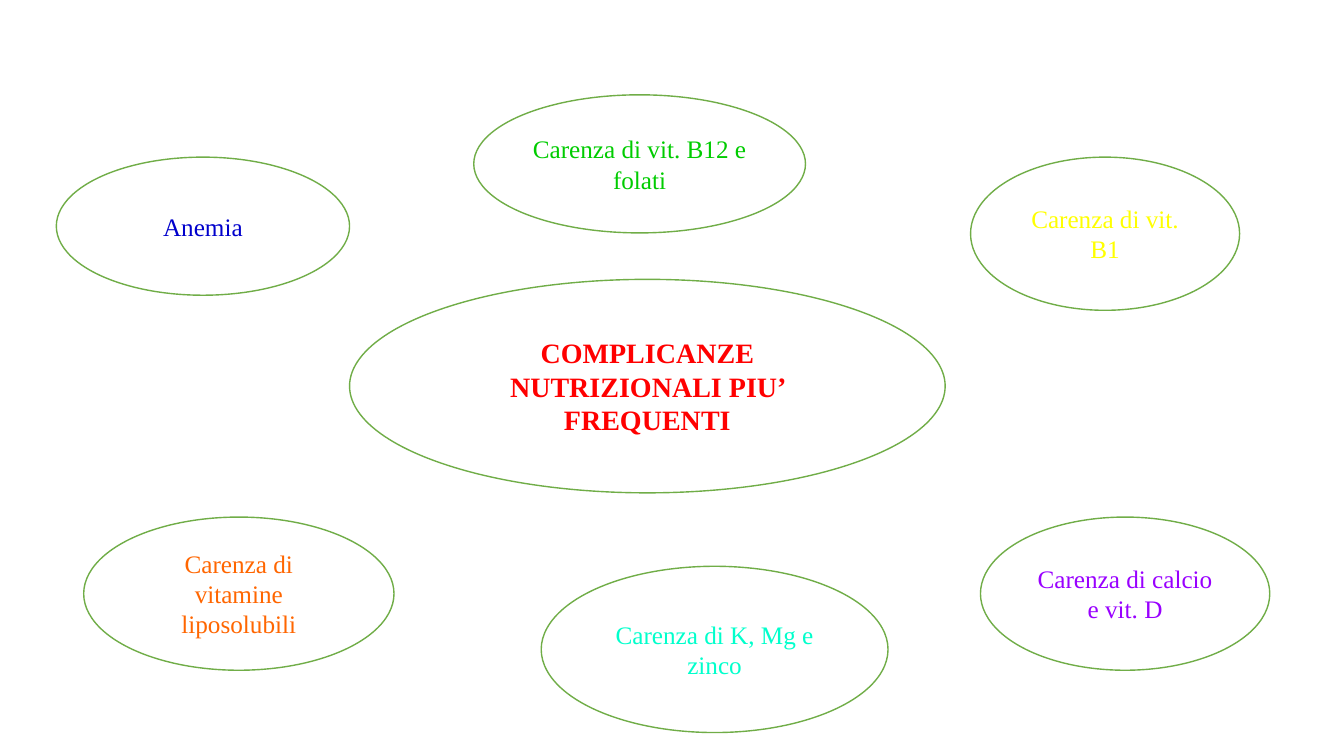
import pptx
import pptx.util
import pptx.dml.color
import pptx.enum.shapes
import pptx.enum.text

Cm = pptx.util.Cm
FONT = "Times New Roman"
GREEN = "70AD47"
WHITE = "FFFFFF"

CORE = ("COMPLICANZE NUTRIZIONALI PIU’ FREQUENTI", "FF0000", (8.81, 7.04, 15.01, 5.38))
ITEMS = [
    ("Anemia", "0000CC", (1.42, 3.96, 7.39, 3.48)),
    ("Carenza di vit. B12 e folati", "00CC00", (11.94, 2.39, 8.36, 3.48)),
    ("Carenza di vit. B1", "FFFF00", (24.46, 3.96, 6.78, 3.86)),
    ("Carenza di calcio e vit. D", "9900FF", (24.71, 13.03, 7.29, 3.86)),
    ("Carenza di K, Mg e zinco", "00FFCC", (13.64, 14.27, 8.74, 4.19)),
    ("Carenza di vitamine liposolubili", "FF6600", (2.11, 13.03, 7.82, 3.86)),
]


def paint(target, color):
    target.rgb = pptx.dml.color.RGBColor.from_string(color)


def write(shape, text, color=GREEN, size=18, bold=False):
    frame = shape.text_frame
    frame.word_wrap = True
    frame.vertical_anchor = pptx.enum.text.MSO_ANCHOR.MIDDLE
    para = frame.paragraphs[0]
    para.alignment = pptx.enum.text.PP_ALIGN.CENTER
    run = para.add_run()
    run.text = text
    run.font.name = FONT
    run.font.size = pptx.util.Pt(size)
    run.font.bold = bold
    paint(run.font.color, color)


def add_oval(slide, text, color, box, **style):
    oval = slide.shapes.add_shape(
        pptx.enum.shapes.MSO_SHAPE.OVAL, *(Cm(side) for side in box))
    oval.shadow.inherit = False
    oval.fill.solid()
    paint(oval.fill.fore_color, WHITE)
    paint(oval.line.color, GREEN)
    oval.line.width = pptx.util.Pt(1)
    write(oval, text, color=color, **style)


def main():
    deck = pptx.Presentation()
    deck.slide_width = Cm(33.87)
    deck.slide_height = Cm(19.05)
    slide = deck.slides.add_slide(deck.slide_layouts[6])
    add_oval(slide, *CORE, size=20, bold=True)
    for item in ITEMS:
        add_oval(slide, *item)
    deck.save("out.pptx")


if __name__ == "__main__":
    main()
